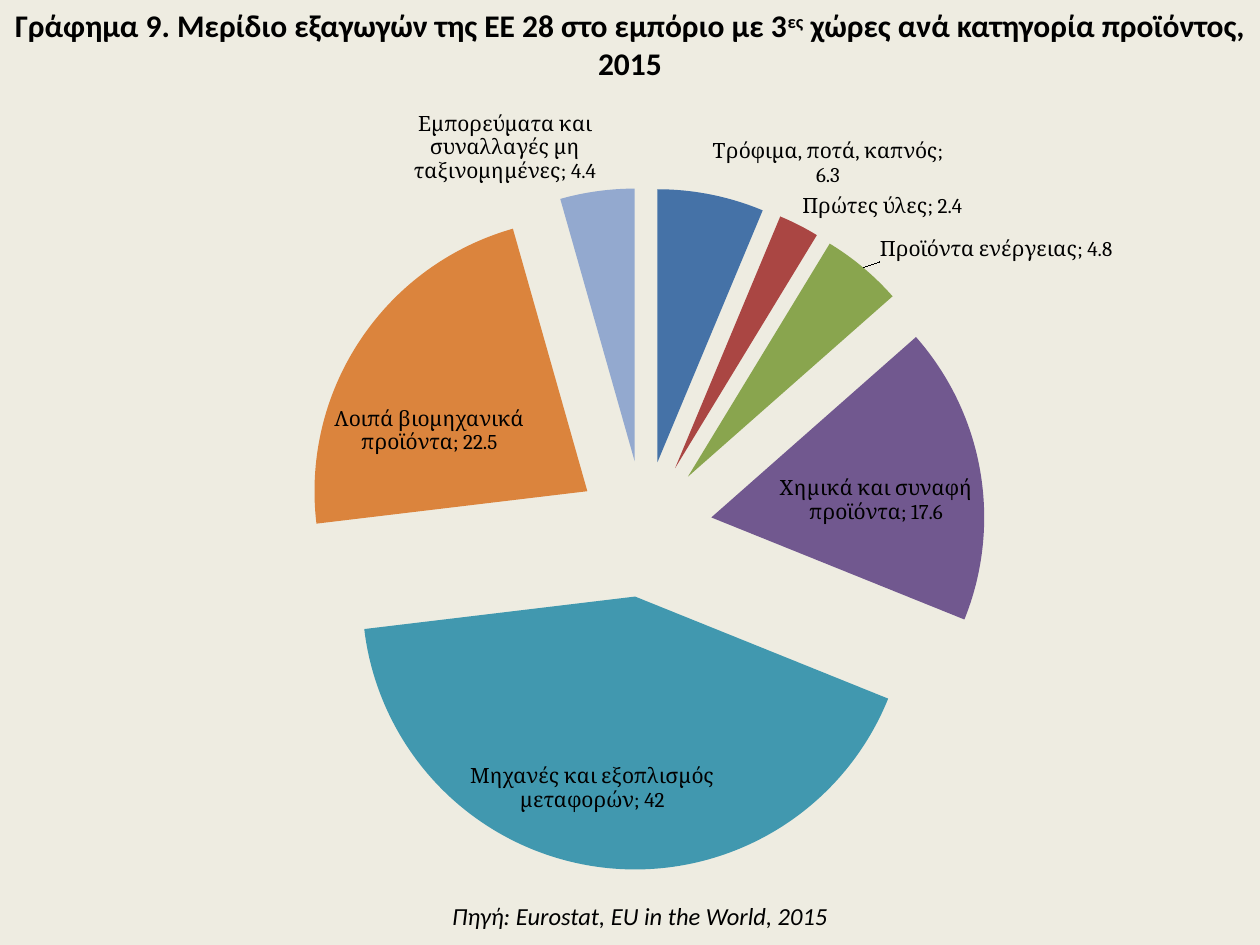
from copy import deepcopy

from lxml.etree import SubElement
from pptx import Presentation
from pptx.chart.data import CategoryChartData
from pptx.dml.color import RGBColor
from pptx.enum.chart import XL_CHART_TYPE, XL_LABEL_POSITION
from pptx.enum.text import MSO_ANCHOR, MSO_AUTO_SIZE, PP_ALIGN
from pptx.oxml import parse_xml
from pptx.oxml.ns import nsdecls, qn
from pptx.util import Cm, Pt

COLOURS = {"background": "EEECE1", "text": "000000"}
EXPORTS = [
    ("Τρόφιμα, ποτά, καπνός", 6.3, "4572A7"),
    ("Πρώτες ύλες", 2.4, "AA4643"),
    ("Προϊόντα ενέργειας", 4.8, "89A54E"),
    ("Χημικά και συναφή προϊόντα", 17.6, "71588F"),
    ("Μηχανές και εξοπλισμός μεταφορών", 42, "4198AF"),
    ("Λοιπά βιομηχανικά προϊόντα", 22.5, "DB843D"),
    ("Εμπορεύματα και συναλλαγές μη ταξινομημένες", 4.4, "93A9CF"),
]
ENERGY = 2
EXPLOSION = 25


def colour(value):
    return RGBColor.from_string(value)


def set_font(font, name, size, bold=False, italic=False):
    font.name = name
    font.size = Pt(size)
    font.bold = bold
    font.italic = italic
    font.color.rgb = colour(COLOURS["text"])


def fill_text(shape, spans, size, bold=False, italic=False):
    frame = shape.text_frame
    frame.word_wrap = True
    frame.auto_size = MSO_AUTO_SIZE.NONE
    frame.vertical_anchor = MSO_ANCHOR.TOP
    para = frame.paragraphs[0]
    para.alignment = PP_ALIGN.CENTER
    for text, baseline in spans:
        span = para.add_run()
        span.text = text
        set_font(span.font, "Calibri", size, bold, italic)
        if baseline:
            span._r.get_or_add_rPr().set("baseline", str(baseline * 1000))


def add_heading(page, left, top, width, height):
    title = page.shapes.title
    title.left, title.top, title.width, title.height = left, top, width, height
    spans = [
        ("Γράφημα 9. Μερίδιο εξαγωγών της ΕΕ 28 στο εμπόριο με 3", 0),
        ("ες", 30),
        (" χώρες ανά κατηγορία προϊόντος, 2015", 0),
    ]
    fill_text(title, spans, 18, bold=True)


def manual_layout(**settings):
    layout = parse_xml(f"<c:layout {nsdecls('c')}><c:manualLayout/></c:layout>")
    for name, value in settings.items():
        SubElement(layout[0], qn(f"c:{name}")).set("val", str(value))
    return layout


def add_labels(series):
    labels = series.data_labels
    labels.show_value = True
    labels.show_category_name = True
    labels.show_percentage = False
    labels.position = XL_LABEL_POSITION.BEST_FIT
    set_font(labels.font, "Cambria", 12)

    group = labels._element
    separator = parse_xml(f"<c:separator {nsdecls('c')}>; </c:separator>")
    group.find(qn("c:showBubbleSize")).addnext(separator)
    group.find(qn("c:showLeaderLines")).set("val", "1")

    shifted = parse_xml(f'<c:dLbl {nsdecls("c")}><c:idx val="{ENERGY}"/></c:dLbl>')
    shifted.append(manual_layout(x=0.01, y=0))
    for part in group:
        if part.tag != qn("c:showLeaderLines"):
            shifted.append(deepcopy(part))
    group.insert(0, shifted)


def add_pie(page, left, top, width, height):
    data = CategoryChartData()
    data.categories = [name for name, _, _ in EXPORTS]
    data.add_series("Series 1", [value for _, value, _ in EXPORTS])
    chart = page.shapes.add_chart(
        XL_CHART_TYPE.PIE, left, top, width, height, data
    ).chart
    chart.has_title = False
    chart.has_legend = False
    set_font(chart.font, "Calibri", 10)

    plot = chart.plots[0]
    plot.vary_by_categories = True
    series = plot.series[0]
    for index, (_, _, shade) in enumerate(EXPORTS):
        fill = series.points[index].format.fill
        fill.solid()
        fill.fore_color.rgb = colour(shade)
    explosion = parse_xml(f'<c:explosion {nsdecls("c")} val="{EXPLOSION}"/>')
    series._element.find(qn("c:dPt")).addprevious(explosion)
    add_labels(series)

    area = chart._chartSpace.chart.plotArea
    for old in area.findall(qn("c:layout")):
        area.remove(old)
    area.insert(0, manual_layout(
        layoutTarget="inner", xMode="edge", yMode="edge",
        x=0.225, y=0.116, w=0.573, h=0.86,
    ))


def add_source(page, left, top, width, height):
    box = page.shapes.add_textbox(left, top, width, height)
    fill_text(box, [("Πηγή: Eurostat, EU in the World, 2015", 0)], 14, italic=True)


def main():
    deck = Presentation()
    deck.slide_width, deck.slide_height = Cm(25.4), Cm(19.05)
    page = deck.slides.add_slide(deck.slide_layouts[5])
    background = page.background.fill
    background.solid()
    background.fore_color.rgb = colour(COLOURS["background"])

    add_heading(page, Cm(0), Cm(0), deck.slide_width, Cm(2.57))
    add_pie(page, Cm(0.71), Cm(1.93), Cm(24), Cm(16))
    add_source(page, Cm(3.71), Cm(18.03), Cm(18.39), Cm(0.86))
    deck.save("out.pptx")


if __name__ == "__main__":
    main()
